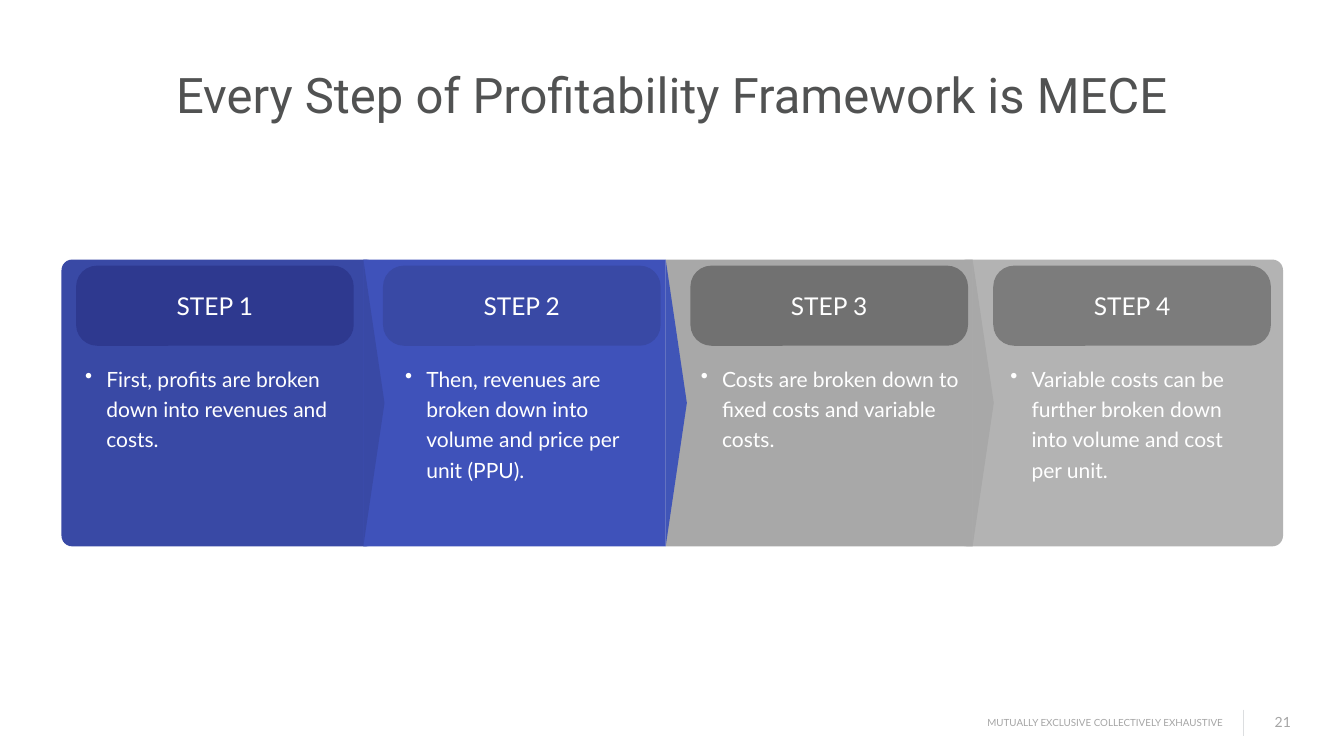
from dataclasses import dataclass

from lxml.etree import SubElement
from pptx import Presentation
from pptx.dml.color import RGBColor
from pptx.enum.shapes import MSO_CONNECTOR, MSO_SHAPE
from pptx.enum.text import MSO_ANCHOR, PP_ALIGN
from pptx.oxml.ns import qn
from pptx.util import Inches, Pt

WHITE = RGBColor(0xFF, 0xFF, 0xFF)
TITLE_GRAY = RGBColor(0x51, 0x52, 0x52)
FOOTER_GRAY = RGBColor(0xA5, 0xA5, 0xA5)
RULE_GRAY = RGBColor(0xDC, 0xDE, 0xE0)
NAVY = RGBColor(0x2E, 0x39, 0x8F)
INDIGO = RGBColor(0x39, 0x49, 0xA5)
BLUE = RGBColor(0x3F, 0x52, 0xBA)
POINTER_BLUE = RGBColor(0x40, 0x55, 0xB7)
DARK_GRAY = RGBColor(0x71, 0x71, 0x71)
MID_GRAY = RGBColor(0x7C, 0x7C, 0x7C)
GRAY = RGBColor(0xA8, 0xA8, 0xA8)
LIGHT_GRAY = RGBColor(0xB3, 0xB3, 0xB3)

BAND_TOP, BAND_HEIGHT = 5.15, 5.69
HEADER_WIDTH, HEADER_HEIGHT = 5.51, 1.59
POINTER_DEPTH = 0.42
BULLET_INDENT = 0.42


@dataclass
class Step:
    heading: str
    text: str
    left: float
    width: float
    header_left: float
    body_left: float
    body_width: float
    body_height: float
    panel_color: RGBColor
    header_color: RGBColor
    pointer_color: RGBColor = None


STEPS = [
    Step("STEP 1", "First, profits are broken down into revenues and costs.",
         1.22, 6.25, 1.51, 1.69, 5.3, 1.7, INDIGO, NAVY),
    Step("STEP 2", "Then, revenues are broken down into volume and price per unit (PPU).",
         7.21, 6, 7.6, 8.04, 5.03, 2.3, BLUE, INDIGO, INDIGO),
    Step("STEP 3", "Costs are broken down to fixed costs and variable costs.",
         13.21, 6.09, 13.7, 13.91, 5.3, 1.7, GRAY, DARK_GRAY, POINTER_BLUE),
    Step("STEP 4", "Variable costs can be further broken down into volume and cost per unit.",
         18.98, 6.48, 19.71, 20.05, 4.85, 2.3, LIGHT_GRAY, MID_GRAY, GRAY),
]


def write(shape, text, size, color, font="Lato", align=PP_ALIGN.CENTER,
          anchor=MSO_ANCHOR.TOP, inset=0.06, wrap=True):
    frame = shape.text_frame
    frame.text = text
    frame.word_wrap = wrap
    frame.vertical_anchor = anchor
    frame.margin_left = frame.margin_right = Inches(inset)
    frame.margin_top = frame.margin_bottom = Inches(inset)
    paragraph = frame.paragraphs[0]
    paragraph.alignment = align
    run_font = paragraph.runs[0].font
    run_font.name, run_font.size = font, Pt(size)
    run_font.color.rgb = color
    return paragraph


def add_text(slide, box, text, size, color, **options):
    textbox = slide.shapes.add_textbox(*map(Inches, box))
    return write(textbox, text, size, color, **options)


def paint(shape, color):
    shape.fill.solid()
    shape.fill.fore_color.rgb = color
    shape.line.fill.background()
    shape.shadow.inherit = False


def add_block(slide, box, color, rounding=None):
    kind = MSO_SHAPE.ROUNDED_RECTANGLE if rounding else MSO_SHAPE.RECTANGLE
    shape = slide.shapes.add_shape(kind, *map(Inches, box))
    if rounding:
        shape.adjustments[0] = rounding
    paint(shape, color)
    return shape


def add_pointer(slide, left, color):
    builder = slide.shapes.build_freeform(Inches(left), Inches(BAND_TOP))
    builder.add_line_segments([
        (Inches(left + POINTER_DEPTH), Inches(BAND_TOP + BAND_HEIGHT / 2)),
        (Inches(left), Inches(BAND_TOP + BAND_HEIGHT)),
    ], close=True)
    paint(builder.convert_to_shape(), color)


def add_bullet(paragraph):
    properties = paragraph._p.get_or_add_pPr()
    properties.set("marL", str(Inches(BULLET_INDENT)))
    properties.set("indent", str(-Inches(BULLET_INDENT)))
    bullet_color = SubElement(properties, qn("a:buClr"))
    SubElement(bullet_color, qn("a:srgbClr"), val=str(WHITE))
    SubElement(properties, qn("a:buChar"), char="•")
    paragraph.line_spacing = 1.2


def add_step_content(slide, step):
    body = (step.body_left, BAND_TOP + 2.02, step.body_width, step.body_height)
    add_bullet(add_text(slide, body, step.text, 30, WHITE, align=PP_ALIGN.LEFT, inset=0))
    header_box = (step.header_left, BAND_TOP + 0.12, HEADER_WIDTH, HEADER_HEIGHT)
    header = add_block(slide, header_box, step.header_color, 0.262)
    write(header, step.heading, 35, WHITE, anchor=MSO_ANCHOR.MIDDLE)


def add_process(slide, steps):
    first, *inner, last = steps
    for step in (first, last):
        add_block(slide, (step.left, BAND_TOP, step.width, BAND_HEIGHT),
                  step.panel_color, 0.037)
    for step in reversed(inner):
        add_block(slide, (step.left, BAND_TOP, step.width, BAND_HEIGHT), step.panel_color)
    for step, previous in zip(inner, steps):
        add_pointer(slide, step.left, step.pointer_color)
    add_pointer(slide, inner[-1].left + inner[-1].width, last.pointer_color)
    for step in steps:
        add_step_content(slide, step)


def add_footer(slide, left, top):
    add_text(slide, (left, top + 0.04, 4.94, 0.44),
             "MUTUALLY EXCLUSIVE COLLECTIVELY EXHAUSTIVE", 14, FOOTER_GRAY,
             align=PP_ALIGN.RIGHT, anchor=MSO_ANCHOR.MIDDLE, inset=0.1, wrap=False)
    rule_left = Inches(left + 5.23)
    rule = slide.shapes.add_connector(
        MSO_CONNECTOR.STRAIGHT, rule_left, Inches(top), rule_left, Inches(top + 0.52))
    rule.line.color.rgb = RULE_GRAY
    rule.line.width = Pt(0.5)
    SubElement(rule._element.spPr, qn("a:effectLst"))
    add_text(slide, (left + 5.8, top + 0.02, 0.45, 0.44), "21", 20, FOOTER_GRAY, wrap=False)


def main():
    presentation = Presentation()
    presentation.slide_width = Inches(26.67)
    presentation.slide_height = Inches(15)
    slide = presentation.slides.add_slide(presentation.slide_layouts[6])
    add_text(slide, (2.22, 1.22, 22.22, 2.5),
             "Every Step of Profitability Framework is MECE", 70, TITLE_GRAY, font="Roboto")
    add_process(slide, STEPS)
    add_footer(slide, 19.43, 14.08)
    presentation.save("out.pptx")


if __name__ == "__main__":
    main()
